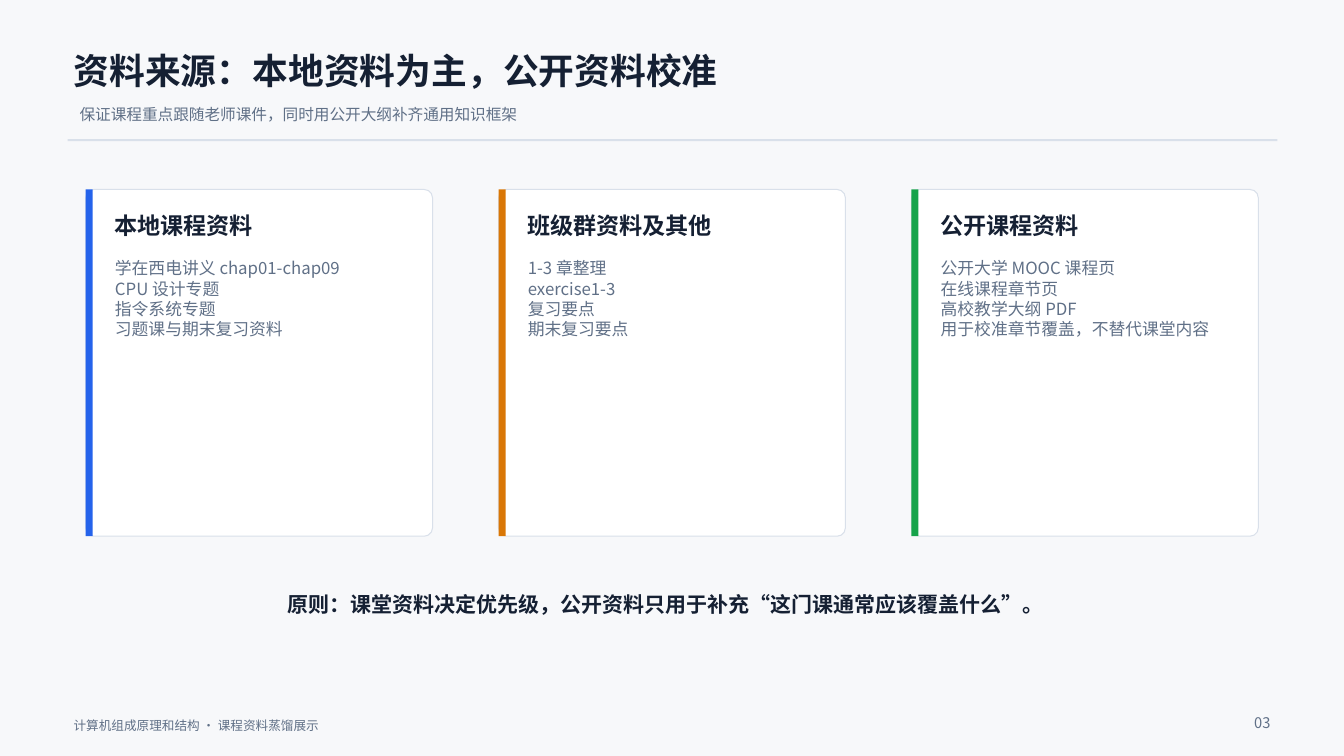
from pptx import Presentation
from pptx.dml.color import RGBColor
from pptx.enum.shapes import MSO_SHAPE as Shape
from pptx.enum.text import MSO_ANCHOR as Anchor, MSO_AUTO_SIZE as Fit, PP_ALIGN as Align
from pptx.oxml.ns import qn
from pptx.util import Inches, Pt
from lxml.etree import SubElement

FONT = "Noto Sans CJK SC"
INK = RGBColor(0x15, 0x20, 0x33)
GRAY = RGBColor(0x60, 0x70, 0x87)
RULE = RGBColor(0xD9, 0xE0, 0xEA)
PAPER = RGBColor(0xF7, 0xF8, 0xFA)
WHITE = RGBColor(0xFF, 0xFF, 0xFF)
BLUE = RGBColor(0x25, 0x63, 0xEB)
AMBER = RGBColor(0xD9, 0x77, 0x06)
GREEN = RGBColor(0x16, 0xA3, 0x4A)

CARDS = [
    (BLUE, "本地课程资料",
     ["学在西电讲义 chap01-chap09", "CPU 设计专题", "指令系统专题", "习题课与期末复习资料"]),
    (AMBER, "班级群资料及其他",
     ["1-3 章整理", "exercise1-3", "复习要点", "期末复习要点"]),
    (GREEN, "公开课程资料",
     ["公开大学 MOOC 课程页", "在线课程章节页", "高校教学大纲 PDF",
      "用于校准章节覆盖，不替代课堂内容"]),
]
LEFT, TOP, SIDE, STEP = 0.85, 1.88, 3.44, 4.095


def put(shape, box, lines, size, color=GRAY, bold=False, align=Align.LEFT):
    """Place a text shape on top of the slide and fill it with lines."""
    tree = shape._element.getparent()
    tree.append(shape._element)
    shape.left, shape.top, shape.width, shape.height = map(Inches, box)
    frame = shape.text_frame
    frame.word_wrap = True
    frame.auto_size = Fit.NONE
    frame.vertical_anchor = Anchor.TOP
    frame.margin_left = frame.margin_right = Inches(0.06)
    frame.margin_top = frame.margin_bottom = Inches(0.04)
    frame.text = "\n".join(lines)
    for para in frame.paragraphs:
        props = para._p.get_or_add_pPr()
        props.set("marL", "0")
        props.set("indent", "0")
        para.alignment = align
        para.space_before = Pt(0)
        SubElement(props, qn("a:buNone"))
        font = para.font
        font.name, font.size, font.bold = FONT, Pt(size), bold
        font.color.rgb = color
        east = SubElement(props.find(qn("a:defRPr")), qn("a:ea"))
        east.set("typeface", FONT)


def label(slide, box, text, size, **style):
    put(slide.shapes.add_textbox(0, 0, 0, 0), box, [text], size, **style)


def block(slide, kind, box, fill):
    shape = slide.shapes.add_shape(kind, *map(Inches, box))
    shape.shadow.inherit = False
    shape.fill.solid()
    shape.fill.fore_color.rgb = fill
    shape.line.fill.background()
    return shape


def card(slide, left, color, head, holder, lines):
    panel = block(slide, Shape.ROUNDED_RECTANGLE, (left, TOP, SIDE, SIDE), WHITE)
    panel.adjustments[0] = 0.024
    panel.line.color.rgb = RULE
    panel.line.width = Pt(0.75)
    block(slide, Shape.RECTANGLE, (left, TOP, 0.07, SIDE), color)
    inner = left + 0.23
    label(slide, (inner, 2.06, 2.98, 0.35), head, 16.5, color=INK, bold=True)
    put(holder, (inner, 2.52, 2.98, 2.62), lines, 12)


def main():
    deck = Presentation()
    deck.slide_width, deck.slide_height = Inches(13.33), Inches(7.5)
    slide = deck.slides.add_slide(deck.slide_layouts.get_by_name("Comparison"))
    back = slide.background.fill
    back.solid()
    back.fore_color.rgb = PAPER

    title, intro, *lists = list(slide.placeholders)
    put(title, (0.67, 0.44, 9.38, 0.6), ["资料来源：本地资料为主，公开资料校准"],
        25.5, INK, True)
    put(intro, (0.73, 1, 7.92, 0.33),
        ["保证课程重点跟随老师课件，同时用公开大纲补齐通用知识框架"], 11.2)
    block(slide, Shape.RECTANGLE, (0.67, 1.38, 12, 0.02), RULE)

    for i, ((color, head, lines), holder) in enumerate(zip(CARDS, lists)):
        card(slide, LEFT + i * STEP, color, head, holder, lines)

    label(slide, (1.29, 5.83, 10.62, 0.4),
          "原则：课堂资料决定优先级，公开资料只用于补充“这门课通常应该覆盖什么”。",
          15, color=INK, bold=True, align=Align.CENTER)
    label(slide, (0.67, 7.08, 5.42, 0.25), "计算机组成原理和结构 · 课程资料蒸馏展示", 9)
    label(slide, (12.08, 7.04, 0.58, 0.29), "03", 10.5, align=Align.RIGHT)
    deck.save("out.pptx")


if __name__ == "__main__":
    main()
